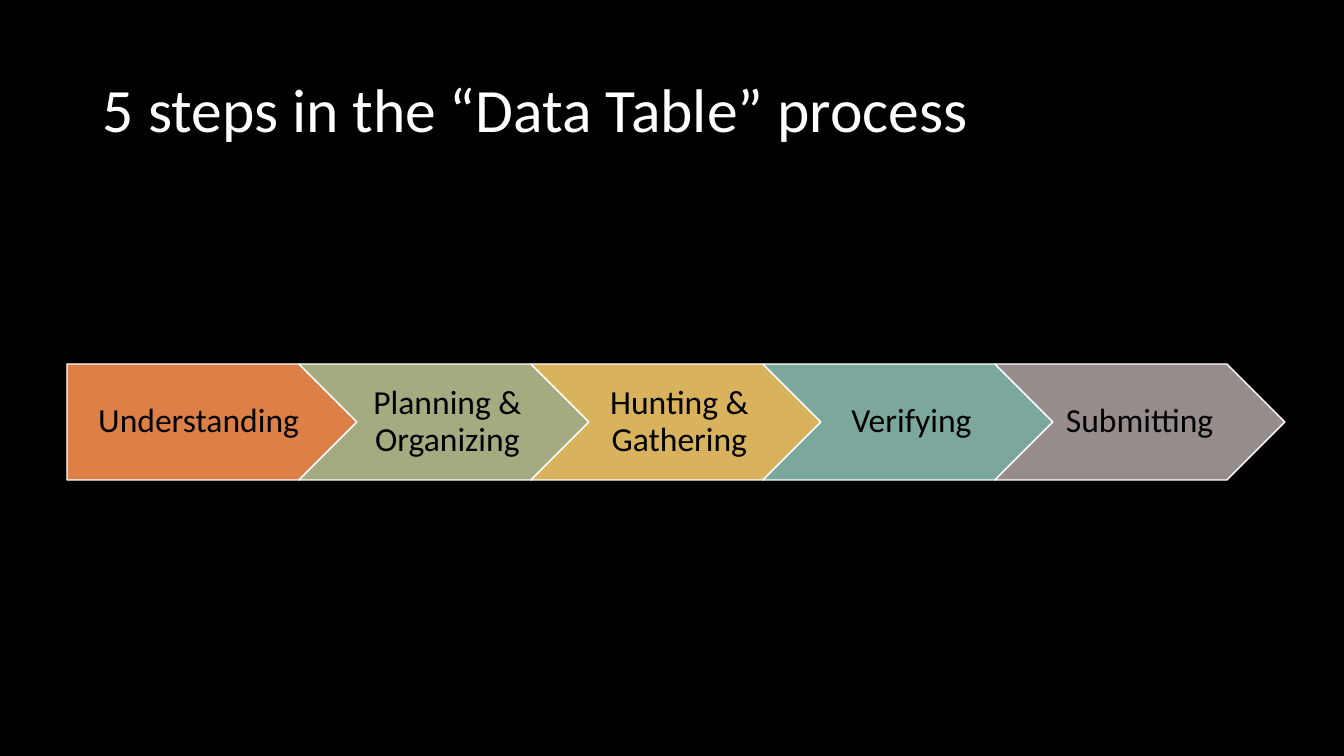
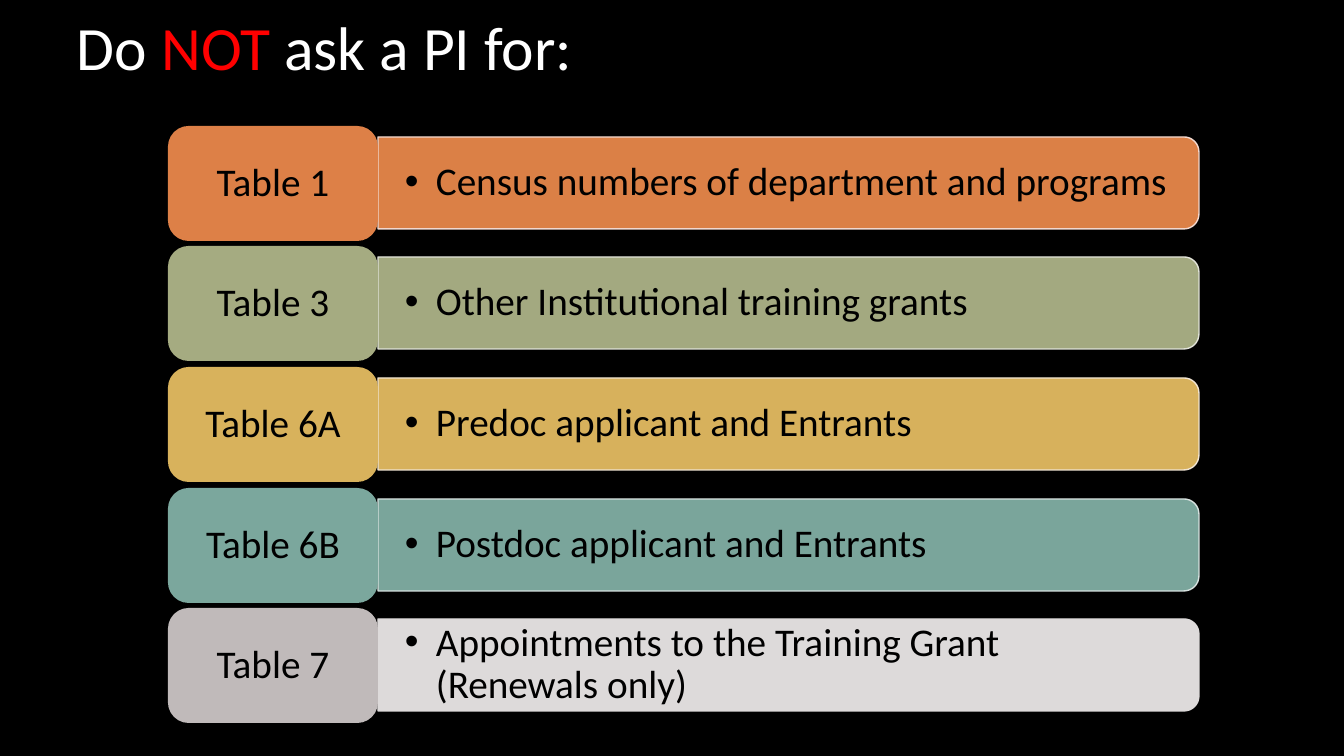
from dataclasses import dataclass
from math import cos, pi, sin

from lxml.etree import SubElement
from pptx import Presentation
from pptx.dml.color import RGBColor as Rgb
from pptx.enum.shapes import MSO_SHAPE as Preset
from pptx.enum.text import MSO_ANCHOR as Anchor, MSO_AUTO_SIZE as AutoSize, PP_ALIGN as Align
from pptx.oxml.ns import qn
from pptx.util import Emu, Pt

EMU_PER_PX = 914400 / 100.8
SLIDE_SIZE = 1344, 756


def px(length):
    return Emu(round(length * EMU_PER_PX))


@dataclass(frozen=True)
class Theme:
    font: str = "Calibri"
    background: str = "000000"
    heading: str = "FFFFFF"
    warning: str = "FF0000"
    text: str = "000000"
    step_edge: str = "FFFFFF"
    step_fills: tuple = ("DD8047", "A5AB81", "D8B25C", "7BA79D", "968C8C")
    label_fills: tuple = ("DD8047", "A5AB81", "D8B25C", "7BA79D", "C0BABA")
    panel_fills: tuple = ("DB8046", "A3A980", "D7B15C", "7AA59B", "DDDADA")
    panel_edges: tuple = ("F2D8CF", "E1E2D8", "F0E4D2", "D7E1DF", "DDDADA")
    title_size: int = 44
    step_size: int = 24
    row_size: int = 28
    line_spacing: float = 0.9


class Deck:
    def __init__(self, theme):
        self.theme = theme
        self.prs = Presentation()
        self.prs.slide_width, self.prs.slide_height = map(px, SLIDE_SIZE)
        backdrop = self.prs.slide_master.background.fill
        backdrop.solid()
        backdrop.fore_color.rgb = Rgb.from_string(theme.background)
        self.slide = None

    def add_slide(self, title_runs, left, top, width, height):
        self.slide = self.prs.slides.add_slide(self.prs.slide_layouts[5])
        title = self.slide.shapes.title
        title.left, title.top, title.width, title.height = map(px, (left, top, width, height))
        self.set_text(title, title_runs, self.theme.title_size, Align.LEFT)

    def set_text(self, shape, runs, size, align, insets=(10, 5, 10, 5)):
        frame = shape.text_frame
        frame.word_wrap = True
        frame.auto_size = AutoSize.NONE
        frame.vertical_anchor = Anchor.MIDDLE
        (frame.margin_left, frame.margin_top,
         frame.margin_right, frame.margin_bottom) = map(px, insets)
        paragraph = frame.paragraphs[0]
        paragraph.alignment = align
        paragraph.line_spacing = self.theme.line_spacing
        for text, colour in runs:
            run = paragraph.add_run()
            run.text = text
            run.font.name = self.theme.font
            run.font.size = Pt(size)
            run.font.color.rgb = Rgb.from_string(colour)
        return paragraph

    def paint(self, shape, fill, edge=None):
        shape.shadow.inherit = False
        shape.fill.solid()
        shape.fill.fore_color.rgb = Rgb.from_string(fill)
        if edge:
            shape.line.color.rgb = Rgb.from_string(edge)
            shape.line.width = Pt(1)
        else:
            shape.line.fill.background()

    def add_step(self, preset, text, fill, left, top, width, height, left_inset):
        step = self.slide.shapes.add_shape(preset, *map(px, (left, top, width, height)))
        step.adjustments[0] = 0.5
        self.paint(step, fill, self.theme.step_edge)
        self.set_text(step, [(text, self.theme.text)], self.theme.step_size,
                      Align.CENTER, (left_inset, 7, 4, 7))

    def add_label(self, text, fill, left, top, width, height):
        label = self.slide.shapes.add_shape(
            Preset.ROUNDED_RECTANGLE, *map(px, (left, top, width, height)))
        label.adjustments[0] = 0.18
        self.paint(label, fill)
        self.set_text(label, [(text, self.theme.text)], self.theme.row_size,
                      Align.CENTER, (10, 4, 10, 4))

    def add_panel(self, text, fill, edge, left, top, width, height, radius=15, arc_steps=8):
        right, bottom = left + width, top + height
        angles = [pi / 2 * step / arc_steps for step in range(arc_steps + 1)]
        upper = [(right - radius + radius * sin(a), top + radius - radius * cos(a))
                 for a in angles]
        lower = [(x, top + bottom - y) for x, y in reversed(upper)]
        outline = self.slide.shapes.build_freeform(px(left), px(top))
        outline.add_line_segments(
            [(px(x), px(y)) for x, y in upper + lower + [(left, bottom)]])
        panel = outline.convert_to_shape()
        self.paint(panel, fill, edge)
        paragraph = self.set_text(panel, [(text, self.theme.text)], self.theme.row_size,
                                  Align.LEFT, (27, 4, 30, 4))
        self.add_bullet(paragraph, 31)

    def add_bullet(self, paragraph, indent):
        properties = paragraph._p.get_or_add_pPr()
        properties.set("marL", str(px(indent)))
        properties.set("indent", str(-px(indent)))
        SubElement(properties, qn("a:buFont")).set("typeface", "Arial")
        SubElement(properties, qn("a:buChar")).set("char", "•")


def build_steps(deck):
    theme = deck.theme
    deck.add_slide([("5 steps in the “Data Table” process", theme.heading)], 93, 40, 1159, 146)
    steps = ["Understanding ", "Planning & Organizing", "Hunting & Gathering",
             "Verifying", "Submitting "]
    width, height = 290, 116
    pitch = width - height // 2
    for index, (text, fill) in enumerate(zip(steps, theme.step_fills)):
        preset, inset = (Preset.CHEVRON, 11) if index else (Preset.PENTAGON, 14)
        deck.add_step(preset, text, fill, 67 + index * pitch, 364, width, height, inset)


def build_exclusions(deck):
    theme = deck.theme
    deck.add_slide([("Do ", theme.heading), ("NOT", theme.warning),
                    (" ask a PI for:", theme.heading)], 67, 5, 1210, 92)
    rows = [
        ("Table 1", "Census numbers of department and programs"),
        ("Table 3", "Other Institutional training grants"),
        ("Table 6A", "Predoc applicant and Entrants"),
        ("Table 6B", "Postdoc applicant and Entrants"),
        ("Table 7", "Appointments to the Training Grant (Renewals only)"),
    ]
    first_top, last_top = 126, 608
    left, label_width, label_height = 168, 210, 115
    panel_width, panel_height = 821, 92
    panel_drop = (label_height - panel_height) // 2
    colours = zip(theme.label_fills, theme.panel_fills, theme.panel_edges)
    for index, ((table, content), (label_fill, panel_fill, edge)) in enumerate(zip(rows, colours)):
        top = first_top + round(index * (last_top - first_top) / (len(rows) - 1))
        deck.add_panel(content, panel_fill, edge, left + label_width, top + panel_drop,
                       panel_width, panel_height)
        deck.add_label(table, label_fill, left, top, label_width, label_height)


def main():
    deck = Deck(Theme())
    build_steps(deck)
    build_exclusions(deck)
    deck.prs.save("out.pptx")


if __name__ == "__main__":
    main()
